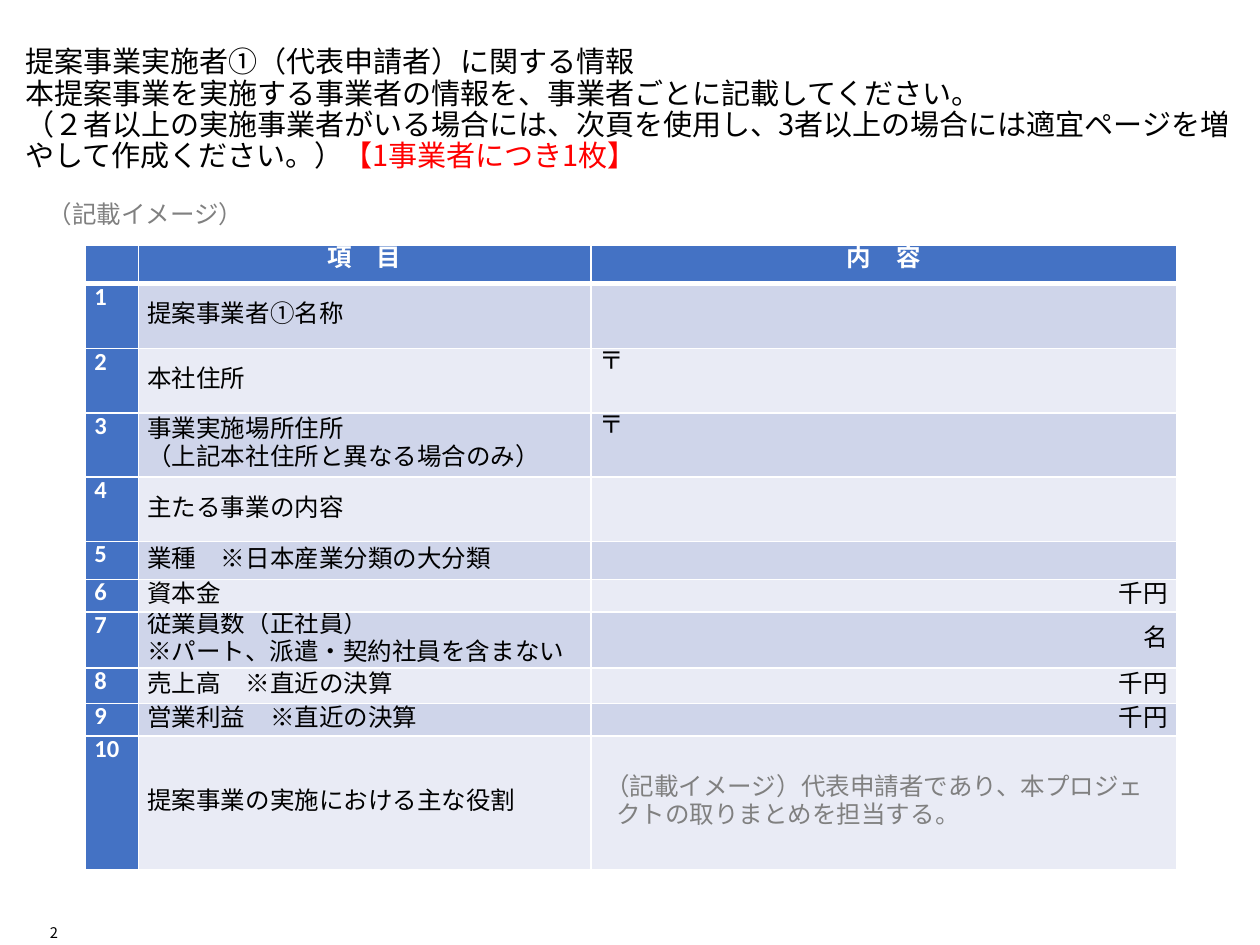
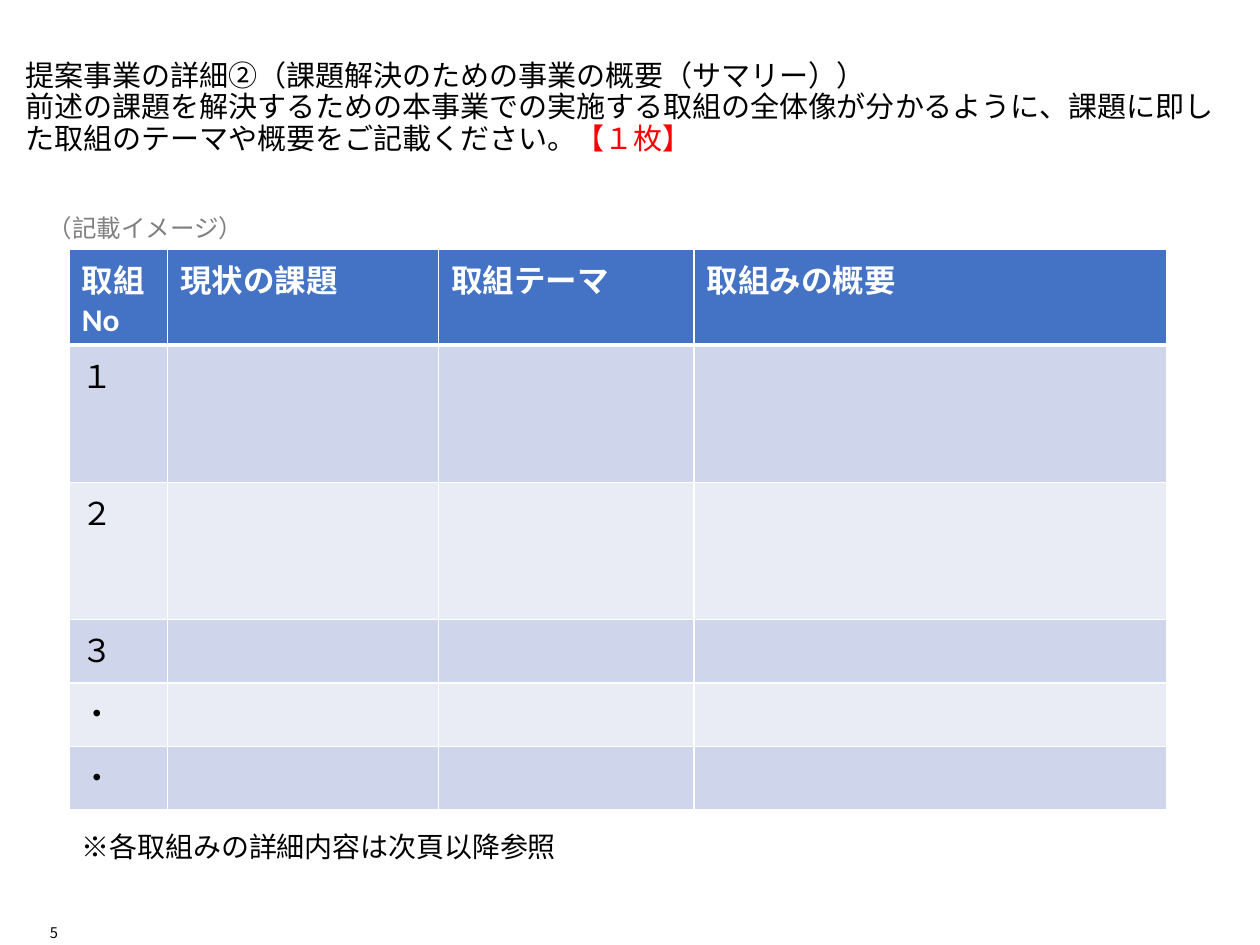
from copy import deepcopy

from lxml import etree
from pptx import Presentation
from pptx.dml.color import RGBColor
from pptx.enum.text import MSO_ANCHOR, PP_ALIGN
from pptx.oxml.ns import qn
from pptx.util import Inches, Pt

TOP, MIDDLE, BOTTOM = MSO_ANCHOR.TOP, MSO_ANCHOR.MIDDLE, MSO_ANCHOR.BOTTOM
LEFT, CENTER, RIGHT = PP_ALIGN.LEFT, PP_ALIGN.CENTER, PP_ALIGN.RIGHT

BLACK, WHITE, RED, GRAY = "000000", "FFFFFF", "FF0000", "808080"
HEADER_FILL = "4472C4"
BAND_FILLS = ("E9EBF5", "CFD5EA")  # even rows, odd rows
GOTHIC, LATIN = "Noto Sans CJK JP", "Calibri"


def color(hex_string):
    return RGBColor.from_string(hex_string)


class FormDeck:
    """Holds the style and the current page; lengths are hundredths of the page."""

    def __init__(self):
        self.deck = Presentation()
        self.deck.slide_width, self.deck.slide_height = Inches(10), Inches(7.5)
        self.page = None

    def columns(self, count):
        return round(self.deck.slide_width * count / 100)

    def rows(self, count):
        return round(self.deck.slide_height * count / 100)

    def style_paragraph(self, para, size, font, ink, bold=False, align=LEFT, spacing=None):
        para.alignment = align
        if spacing:
            para.line_spacing = spacing
        for span in para.runs:
            span.font.size, span.font.name, span.font.bold = Pt(size), font, bold
            span.font.color.rgb = color(ink)
            east_asian = etree.SubElement(span.font._element, qn("a:ea"))
            east_asian.set("typeface", GOTHIC)
        for line_break in para._p.findall(qn("a:br")):
            line_break.append(deepcopy(para.runs[0].font._element))

    def text(self, left, top, width, height, words, size, font=GOTHIC, ink=BLACK,
             anchor=TOP, align=LEFT, spacing=None, inset=True, wrap=True):
        box = self.page.shapes.add_textbox(
            self.columns(left), self.rows(top), self.columns(width), self.rows(height))
        frame = box.text_frame
        frame.word_wrap, frame.vertical_anchor = wrap, anchor
        if not inset:
            frame.margin_left = frame.margin_right = 0
            frame.margin_top = frame.margin_bottom = 0
        para = frame.paragraphs[0]
        para.text = words
        self.style_paragraph(para, size, font, ink, align=align, spacing=spacing)
        return para

    def add_page(self, number, title, limit, title_top, title_height):
        """Start a page with its title, the red page limit and the page number."""
        self.page = self.deck.slides.add_slide(self.deck.slide_layouts[6])
        para = self.text(2, title_top, 96.2, title_height, title, 16.6,
                         anchor=BOTTOM, spacing=Pt(17.9), inset=False)
        span = para.add_run()
        span.text = limit
        first = para.runs[0].font._element
        span._r.insert(0, deepcopy(first))
        span.font.color.rgb = color(RED)
        self.text(2.8, 97.2, 1.8, 2.4, str(number), 8.4,
                  anchor=BOTTOM, align=RIGHT, inset=False)

    def sample_label(self, top):
        self.text(2.8, top, 17.7, 4.53, "（記載イメージ）", 14, LATIN, GRAY, wrap=False)

    def table(self, left, top, widths, heights):
        frame = self.page.shapes.add_table(
            len(heights), len(widths), self.columns(left), self.rows(top),
            self.columns(sum(widths)), self.rows(sum(heights)))
        grid = frame.table
        for column, width in zip(grid.columns, widths):
            column.width = self.columns(width)
        for row, height in zip(grid.rows, heights):
            row.height = self.rows(height)
        return grid

    def borders(self, cell, row):
        """Draw white cell borders, thicker between the header and the body."""
        weights = {"L": 1, "R": 1, "T": 3 if row == 1 else 1, "B": 3 if row == 0 else 1}
        for side, weight in weights.items():
            line = etree.SubElement(cell._tc.get_or_add_tcPr(), qn(f"a:ln{side}"))
            line.set("w", str(Pt(weight)))
            fill = etree.SubElement(line, qn("a:solidFill"))
            etree.SubElement(fill, qn("a:srgbClr")).set("val", WHITE)

    def cell(self, grid, row, column, words, size, heading=False, anchor=TOP,
             align=LEFT, spacing=None, ink=BLACK, compact=False):
        cell = grid.cell(row, column)
        self.borders(cell, row)
        cell.fill.solid()
        cell.fill.fore_color.rgb = color(HEADER_FILL if heading else BAND_FILLS[row % 2])
        cell.vertical_anchor = anchor
        if compact:
            cell.margin_left = cell.margin_right = Inches(0.07)
            cell.margin_top = cell.margin_bottom = 0
        cell.text_frame.text = words
        for para in cell.text_frame.paragraphs:
            self.style_paragraph(para, size, LATIN, WHITE if heading else ink,
                                 heading, align, spacing)
        return cell


def build_applicant_page(form):
    form.add_page(
        2,
        "提案事業実施者①（代表申請者）に関する情報\n"
        "本提案事業を実施する事業者の情報を、事業者ごとに記載してください。\n"
        "（２者以上の実施事業者がいる場合には、次頁を使用し、3者以上の場合には"
        "適宜ページを増やして作成ください。）",
        "【1事業者につき1枚】", 9.33, 8.93)
    form.sample_label(20.4)

    role = " （記載イメージ）代表申請者であり、本プロジェクトの取りまとめを担当する。"
    items = [  # item, content, row height
        ("提案事業者①名称", "", 6.9),
        ("本社住所", "〒", 6.8),
        ("事業実施場所住所\n（上記本社住所と異なる場合のみ）", "〒", 6.8),
        ("主たる事業の内容", "", 6.8),
        ("業種　※日本産業分類の大分類", "", 3.7),
        ("資本金", "千円", 3.45),
        ("従業員数（正社員）\n※パート、派遣・契約社員を含まない", "名", 5.93),
        ("売上高　※直近の決算", "千円", 3.75),
        ("営業利益　※直近の決算", "千円", 3.45),
        ("提案事業の実施における主な役割", role, 14.13),
    ]
    grid = form.table(6.8, 26, (4.2, 35.9, 46.5), [2.96] + [item[2] for item in items])
    common = {"size": 14, "spacing": Pt(16), "compact": True}
    for column, heading in enumerate(("", "項　目", "内　容")):
        form.cell(grid, 0, column, heading, heading=True, align=CENTER, **common)
    for row, (item, content, _) in enumerate(items, start=1):
        form.cell(grid, row, 0, str(row), heading=True, **common)
        form.cell(grid, row, 1, item, anchor=MIDDLE, **common)
        form.cell(grid, row, 2, content,
                  anchor=TOP if content == "〒" else MIDDLE,
                  align=RIGHT if content in ("千円", "名") else LEFT,
                  ink=GRAY if content == role else BLACK, **common)
    role_para = grid.cell(len(items), 2).text_frame.paragraphs[0]
    hanging = Inches(0.13)
    properties = role_para._p.get_or_add_pPr()
    properties.set("marL", str(hanging))
    properties.set("indent", str(-hanging))


def build_summary_page(form):
    form.add_page(
        5,
        "提案事業の詳細②（課題解決のための事業の概要（サマリー））\n"
        "前述の課題を解決するための本事業での実施する取組の全体像が分かるように、"
        "課題に即した取組のテーマや概要をご記載ください。",
        "【１枚】", 3.87, 12.53)

    headings = ("取組No", "現状の課題", "取組テーマ", "取組みの概要")
    numbers = ("１", "２", "３", "・", "・")
    grid = form.table(5.5, 26.4, (7.8, 21.5, 20.3, 37.5),
                      [10.13] + [14.53] * 2 + [6.7] * 3)
    for column, heading in enumerate(headings):
        form.cell(grid, 0, column, heading, 18, heading=True)
        for row, number in enumerate(numbers, start=1):
            form.cell(grid, row, column, number if column == 0 else "", 18)

    form.text(5.5, 87.47, 62.9, 4.13, "※各取組みの詳細内容は次頁以降参照", 16, anchor=MIDDLE)
    form.sample_label(21.87)


def main():
    form = FormDeck()
    build_applicant_page(form)
    build_summary_page(form)
    form.deck.save("out.pptx")


if __name__ == "__main__":
    main()
